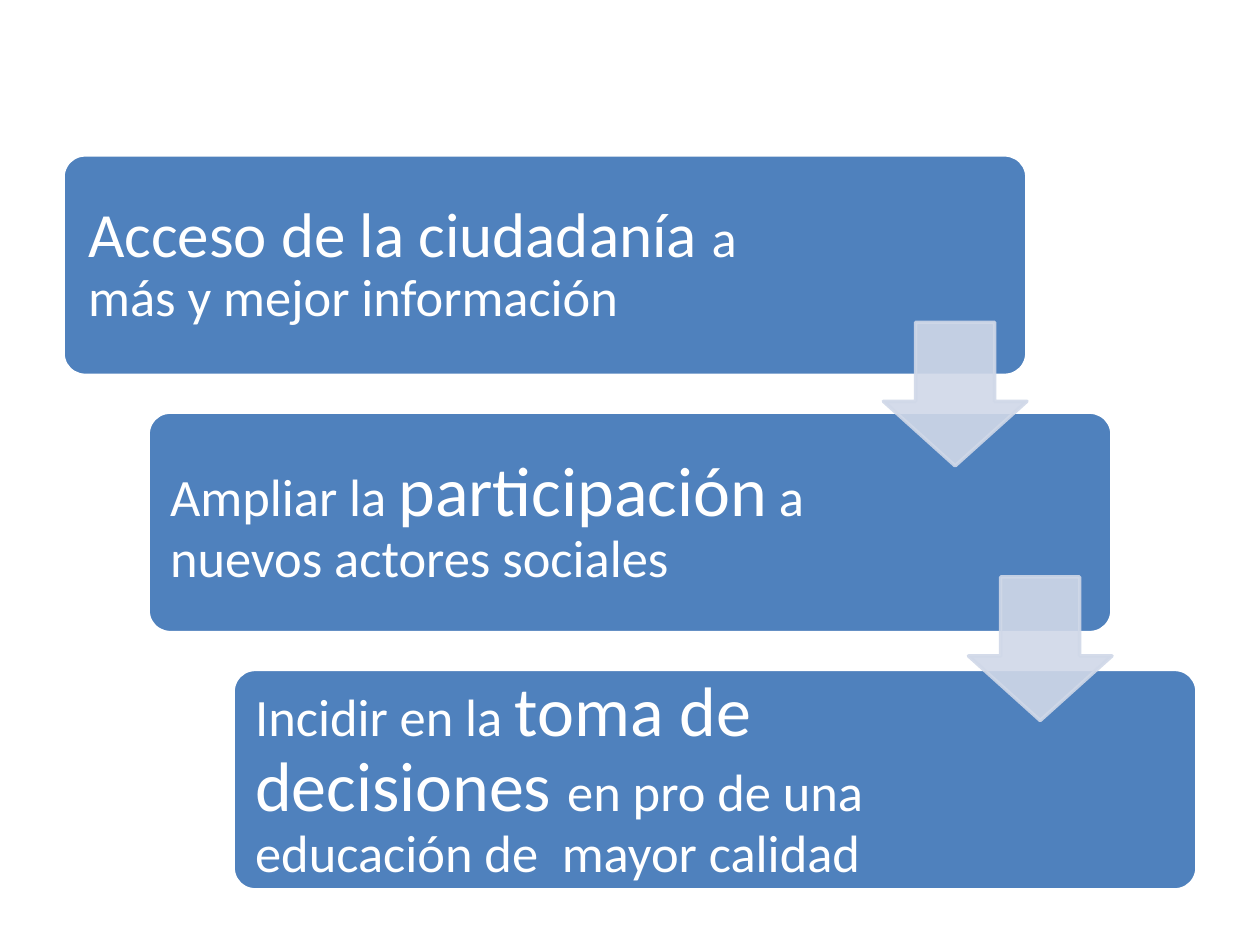
from dataclasses import dataclass

from lxml.etree import SubElement
from pptx import Presentation
from pptx.dml.color import RGBColor
from pptx.enum.shapes import MSO_SHAPE as Shape
from pptx.enum.text import MSO_ANCHOR as Anchor
from pptx.oxml.ns import qn
from pptx.util import Pt

COLORS = {"box": "4F81BD", "arrow": "D0D8E8", "white": "FFFFFF"}
BOX_W, BOX_H = 550.8, 126
BOX_X, BOX_Y = 36, 88.5
STEP_X, STEP_Y = 48.6, 147
TEXT_MARGIN = 3.6
ARROW_X, ARROW_Y, ARROW_SIZE = 504.8, 184.2, 82
ARROW_STEP_Y = 145.5
ARROW_OPACITY = 90


@dataclass(frozen=True)
class Step:
    runs: tuple[tuple[str, int], ...]  # text and size
    inset: float
    text_w: float


STEPS = (
    Step((("Acceso de la ciudadanía ", 36), ("a más y mejor información", 30)), 10.8, 414.7),
    Step((("Ampliar la ", 30), ("participación", 40), (" a nuevos actores sociales", 30)), 9, 413.3),
    Step((("Incidir en la ", 30), ("toma de decisiones ", 40),
          ("en pro de una educación de  mayor calidad", 30)), 9, 413.3),
)


def rgb(name: str) -> RGBColor:
    return RGBColor.from_string(COLORS[name])


def add_filled(s, kind, box: tuple, adjustments: tuple, fill: str, line: str):
    sp = s.shapes.add_shape(kind, *map(Pt, box))
    sp.shadow.inherit = False
    for i, value in enumerate(adjustments):
        sp.adjustments[i] = value
    sp.fill.solid()
    sp.fill.fore_color.rgb = rgb(fill)
    sp.line.color.rgb = rgb(line)
    sp.line.width = Pt(2)
    return sp


def add_step(s, index: int, step: Step) -> None:
    x, y = BOX_X + index * STEP_X, BOX_Y + index * STEP_Y
    add_filled(s, Shape.ROUNDED_RECTANGLE, (x, y, BOX_W, BOX_H), (0.1,), "box", "white")

    text_box = (x + TEXT_MARGIN, y + TEXT_MARGIN, step.text_w, BOX_H - 2 * TEXT_MARGIN)
    tf = s.shapes.add_textbox(*map(Pt, text_box)).text_frame
    tf.word_wrap = True
    tf.vertical_anchor = Anchor.MIDDLE
    tf.margin_left = tf.margin_right = tf.margin_top = tf.margin_bottom = Pt(step.inset)
    p = tf.paragraphs[0]
    p.line_spacing = 0.9
    p.font.name = "Calibri"
    p.font.color.rgb = rgb("white")
    for text, size in step.runs:
        r = p.add_run()
        r.text = text
        r.font.size = Pt(size)


def add_arrow(s, index: int) -> None:
    box = (ARROW_X + index * STEP_X, ARROW_Y + index * ARROW_STEP_Y, ARROW_SIZE, ARROW_SIZE)
    sp = add_filled(s, Shape.DOWN_ARROW, box, (0.55, 0.45), "arrow", "arrow")
    for color in sp._element.spPr.iter(qn("a:srgbClr")):
        SubElement(color, qn("a:alpha"), val=str(ARROW_OPACITY * 1000))


def main() -> None:
    prs = Presentation()
    prs.slide_width, prs.slide_height = Pt(720), Pt(540)
    s = prs.slides.add_slide(prs.slide_layouts[6])
    for i, step in enumerate(STEPS):
        add_step(s, i, step)
    for i in range(len(STEPS) - 1):
        add_arrow(s, i)
    prs.save("out.pptx")


if __name__ == "__main__":
    main()
